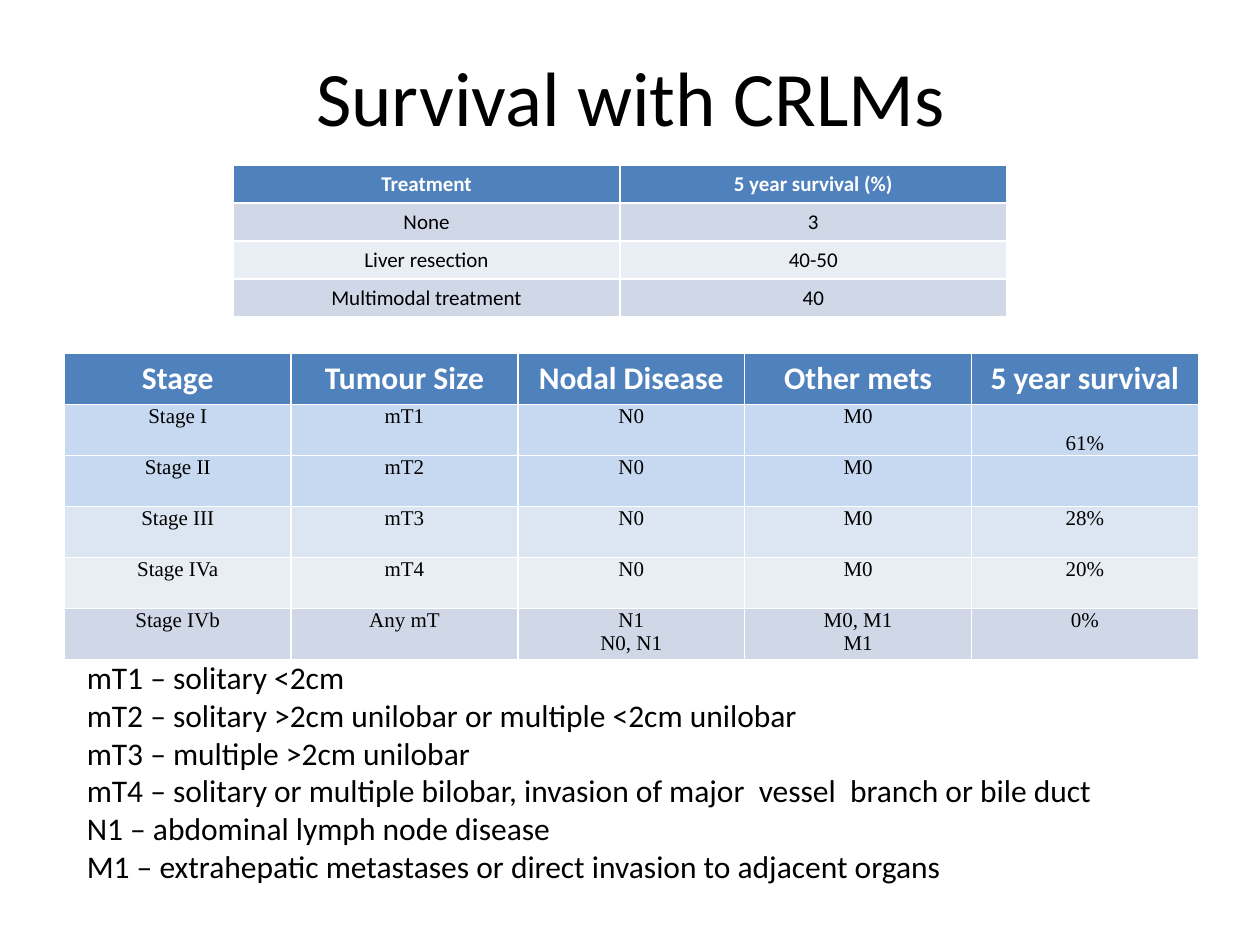
from pptx import Presentation
from pptx import util as u
from pptx.dml.color import RGBColor
from pptx.enum import text as t

Pt = u.Pt

BLACK = RGBColor(0x00, 0x00, 0x00)
WHITE = RGBColor(0xFF, 0xFF, 0xFF)
HEADER_BLUE = RGBColor(0x4F, 0x81, 0xBD)
EARLY_BLUE = RGBColor(0xC6, 0xD9, 0xF1)
MIDDLE_BLUE = RGBColor(0xDC, 0xE6, 0xF2)
PALE_BAND = RGBColor(0xE9, 0xED, 0xF4)
DARK_BAND = RGBColor(0xD0, 0xD8, 0xE8)

TREATMENTS = [
    ("Treatment", "5 year survival (%)"),
    ("None", "3"),
    ("Liver resection", "40-50"),
    ("Multimodal treatment", "40"),
]
STAGES = [
    ("Stage", "Tumour Size", "Nodal Disease", "Other mets", "5 year survival"),
    ("Stage I", "mT1", "N0", "M0", "61%"),
    ("Stage II", "mT2", "N0", "M0", ""),
    ("Stage III", "mT3", "N0", "M0", "28%"),
    ("Stage IVa", "mT4", "N0", "M0", "20%"),
    ("Stage IVb", "Any mT", "N1\nN0, N1", "M0, M1\nM1", "0%"),
]
DEFINITIONS = """mT1 – solitary <2cm
mT2 – solitary >2cm unilobar or multiple <2cm unilobar
mT3 – multiple >2cm unilobar
mT4 – solitary or multiple bilobar, invasion of major  vessel  branch or bile duct
N1 – abdominal lymph node disease
M1 – extrahepatic metastases or direct invasion to adjacent organs"""


def write(frame, content, size=18, font="Calibri", color=BLACK, bold=False,
          align=t.PP_ALIGN.CENTER):
    frame.text = content
    for paragraph in frame.paragraphs:
        paragraph.alignment = align
        paragraph.font.size = Pt(size)
        for run in paragraph.runs:
            run.font.name = font
            run.font.size = Pt(size)
            run.font.bold = bold
            run.font.color.rgb = color


class SlideBuilder:
    def __init__(self, slide, header_fill=HEADER_BLUE):
        self.slide = slide
        self.header_fill = header_fill

    def title(self, content, left, top, width, height):
        shape = self.slide.shapes.title
        shape.left, shape.top = Pt(left), Pt(top)
        shape.width, shape.height = Pt(width), Pt(height)
        shape.text_frame.vertical_anchor = t.MSO_ANCHOR.MIDDLE
        write(shape.text_frame, content, size=44)

    def text(self, content, left, top, width, height):
        shape = self.slide.shapes.add_textbox(Pt(left), Pt(top), Pt(width), Pt(height))
        shape.text_frame.word_wrap = True
        shape.text_frame.auto_size = t.MSO_AUTO_SIZE.SHAPE_TO_FIT_TEXT
        write(shape.text_frame, content, align=t.PP_ALIGN.LEFT)

    def table(self, rows, fills, left, top, width, height, header_size=12,
              body_font="Calibri", tight=False):
        table = self.slide.shapes.add_table(
            len(rows), len(rows[0]), Pt(left), Pt(top), Pt(width), Pt(height)).table
        for row_index, (row, fill) in enumerate(zip(rows, [self.header_fill] + fills)):
            header = row_index == 0
            for column_index, content in enumerate(row):
                cell = table.cell(row_index, column_index)
                cell.fill.solid()
                cell.fill.fore_color.rgb = fill
                if header:
                    write(cell.text_frame, content, size=header_size, color=WHITE, bold=True)
                else:
                    write(cell.text_frame, content, size=12, font=body_font)
                    if tight:
                        cell.margin_left = cell.margin_right = Pt(5)
                        cell.margin_top = cell.margin_bottom = 0
        return table


def main():
    presentation = Presentation()
    presentation.slide_width, presentation.slide_height = Pt(720), Pt(540)
    builder = SlideBuilder(presentation.slides.add_slide(presentation.slide_layouts[5]))

    builder.title("Survival with CRLMs", 36.5, 9.5, 648, 90)
    stages = builder.table(
        STAGES, [EARLY_BLUE, EARLY_BLUE, MIDDLE_BLUE, PALE_BAND, DARK_BAND],
        36.75, 202, 648, 175, header_size=18, body_font="Times New Roman", tight=True)
    stages.cell(1, 4).vertical_anchor = t.MSO_ANCHOR.BOTTOM
    builder.text(DEFINITIONS, 42.5, 372.5, 641, 138)
    builder.table(TREATMENTS, [DARK_BAND, PALE_BAND, DARK_BAND], 133.25, 94.5, 442, 86.4)

    presentation.save("out.pptx")


if __name__ == "__main__":
    main()
